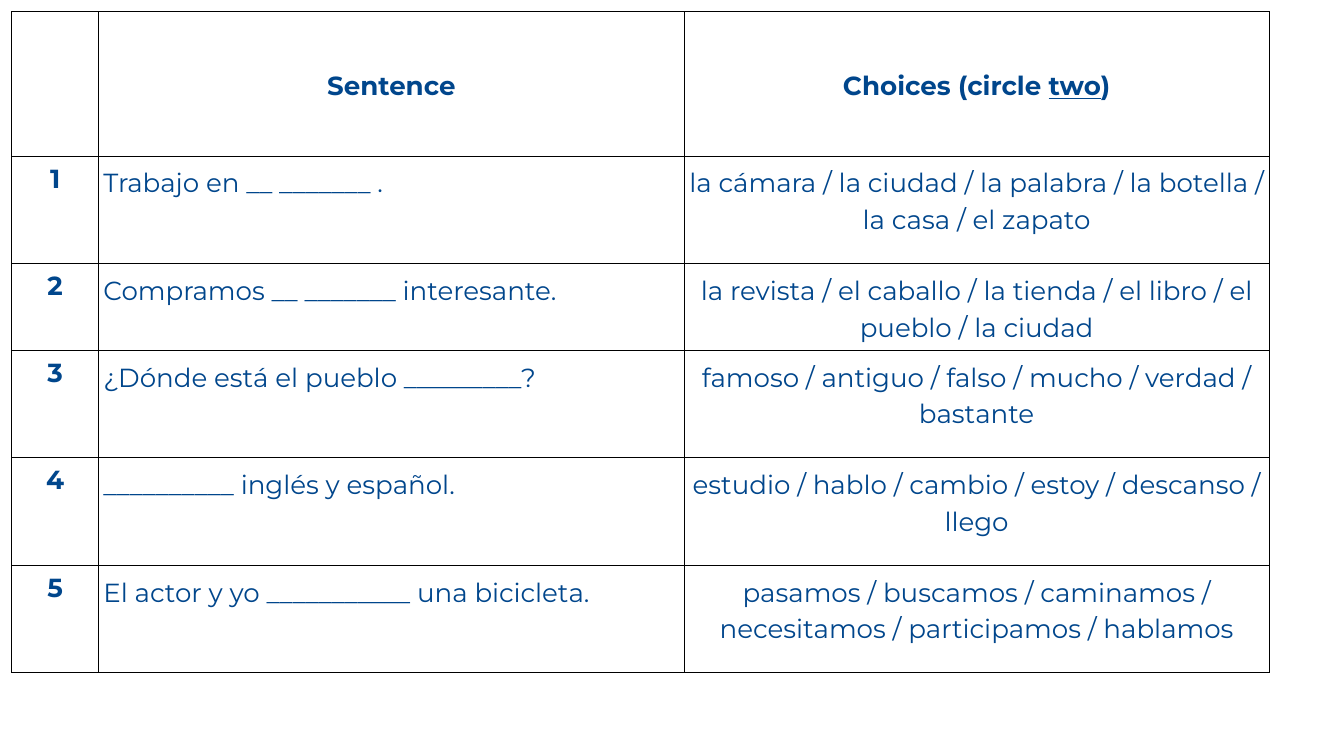
from dataclasses import dataclass

from lxml.etree import SubElement
from pptx import Presentation
from pptx.dml.color import RGBColor as RGB
from pptx.enum.text import MSO_ANCHOR as Anchor, PP_ALIGN as Align
from pptx.oxml.ns import qn
from pptx.util import Pt


@dataclass(frozen=True)
class Theme:
    font: str = "Montserrat"
    size: int = 28
    ink: RGB = RGB(0x00, 0x46, 0x8C)
    line: str = "000000"
    line_width: int = 1
    spacing: float = 1.15


THEME = Theme()
COL_WIDTHS = (93.6, 627, 627)
ROW_HEIGHTS = (155, 115.2, 92, 115.2, 115.2, 115.2)
HEADER = ([], [("Sentence", False)],
          [("Choices (circle ", False), ("two", True), (")", False)])
QUESTIONS = (
    ("Trabajo en __ _______ .",
     "la cámara / la ciudad / la palabra / la botella / la casa / el zapato"),
    ("Compramos __ _______ interesante.",
     "la revista / el caballo / la tienda / el libro / el pueblo / la ciudad"),
    ("¿Dónde está el pueblo _________?",
     "famoso / antiguo / falso / mucho / verdad / bastante"),
    ("__________ inglés y español.",
     "estudio / hablo / cambio / estoy / descanso / llego"),
    ("El actor y yo ___________ una bicicleta.",
     "pasamos / buscamos / caminamos / necesitamos / participamos / hablamos"),
)


def add_borders(cell):
    tcPr = cell._tc.get_or_add_tcPr()
    for side in ("a:lnL", "a:lnR", "a:lnT", "a:lnB"):
        ln = SubElement(tcPr, qn(side), w=str(Pt(THEME.line_width)))
        fill = SubElement(ln, qn("a:solidFill"))
        SubElement(fill, qn("a:srgbClr"), val=THEME.line)


def style_cell(cell):
    cell.margin_left = cell.margin_right = Pt(5)
    cell.margin_top = cell.margin_bottom = Pt(7.2)
    add_borders(cell)
    cell.fill.background()


def write_cell(cell, runs, bold=False, align=Align.CENTER, spacing=THEME.spacing):
    p = cell.text_frame.paragraphs[0]
    p.alignment = align
    p.line_spacing = spacing
    for text, underline in runs:
        r = p.add_run()
        r.text = text
        r.font.name = THEME.font
        r.font.size = Pt(THEME.size)
        r.font.bold = bold
        r.font.underline = underline
        r.font.color.rgb = THEME.ink


def add_quiz_table(s, left, top):
    frame = s.shapes.add_table(len(ROW_HEIGHTS), len(COL_WIDTHS), Pt(left), Pt(top),
                               Pt(sum(COL_WIDTHS)), Pt(sum(ROW_HEIGHTS)))
    table = frame.table
    table.first_row = table.horz_banding = False
    for column, width in zip(table.columns, COL_WIDTHS):
        column.width = Pt(width)
    for row, height in zip(table.rows, ROW_HEIGHTS):
        row.height = Pt(height)
    for cell in table.iter_cells():
        style_cell(cell)

    for col, runs in enumerate(HEADER):
        cell = table.cell(0, col)
        cell.vertical_anchor = Anchor.MIDDLE
        write_cell(cell, runs, bold=True)
    for row, (sentence, choices) in enumerate(QUESTIONS, start=1):
        write_cell(table.cell(row, 0), [(str(row), False)], bold=True, spacing=1.0)
        write_cell(table.cell(row, 1), [(sentence, False)], align=Align.LEFT)
        write_cell(table.cell(row, 2), [(choices, False)])


def main():
    prs = Presentation()
    prs.slide_width, prs.slide_height = Pt(1440), Pt(810)
    s = prs.slides.add_slide(prs.slide_layouts[6])
    add_quiz_table(s, 12.24, 12.24)
    prs.save("out.pptx")


if __name__ == "__main__":
    main()
